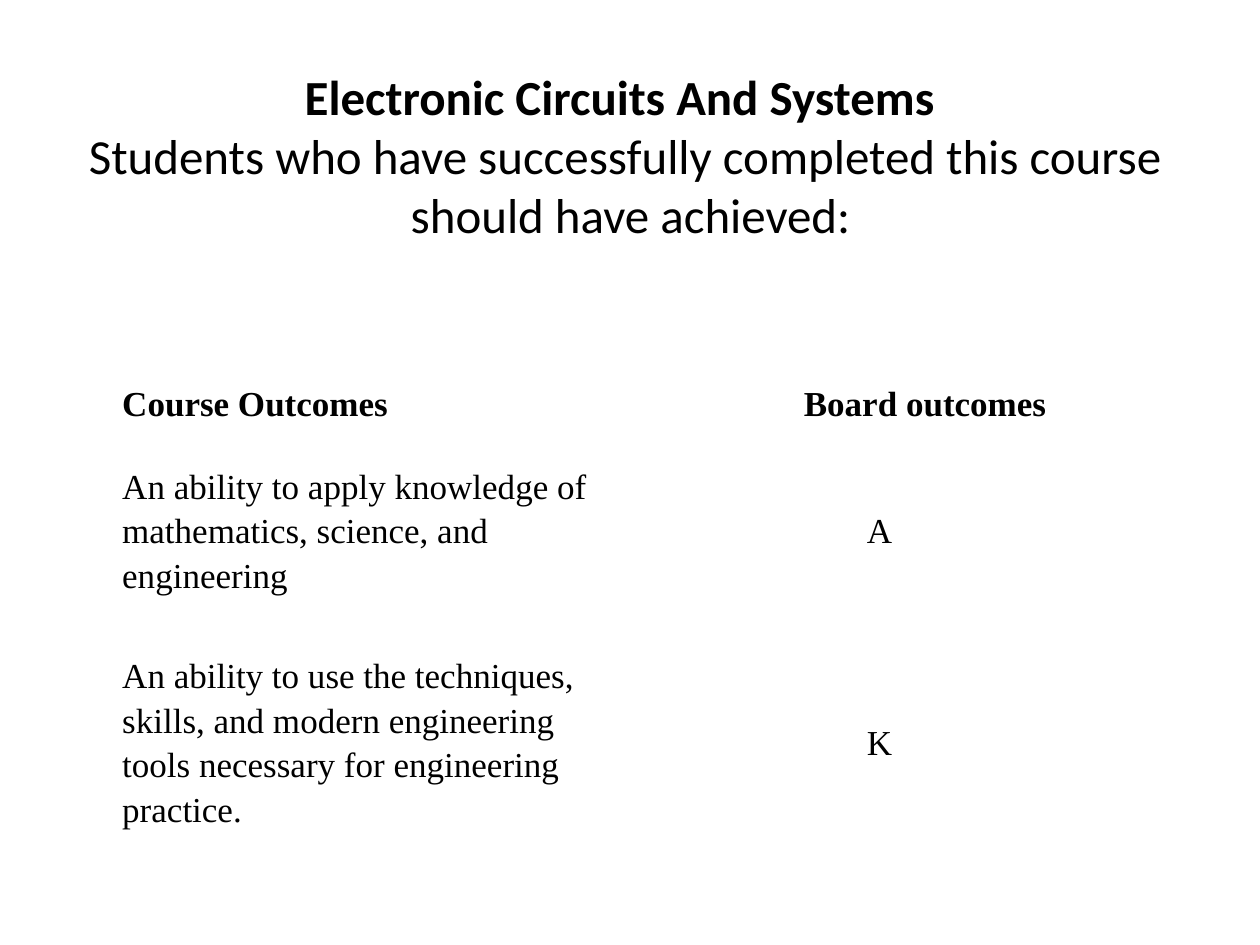
import pptx
import pptx.dml.color
import pptx.enum.text
import pptx.util
from pptx.util import Inches

ALIGN = pptx.enum.text.PP_ALIGN
MIDDLE = pptx.enum.text.MSO_ANCHOR.MIDDLE


def color(hex_code):
    return pptx.dml.color.RGBColor.from_string(hex_code)


class SlideBuilder:
    heading_font, heading_size = "Calibri", 28
    table_font, table_size = "Times New Roman", 20
    ink = "000000"
    cell_inset = 0.05
    line_spacing = 1.15

    def __init__(self, slide):
        self.slide = slide

    def style(self, paragraph, font, size, bold, align):
        paragraph.alignment = align
        for run in paragraph.runs:
            run.font.name = font
            run.font.size = pptx.util.Pt(size)
            run.font.bold = bold
            run.font.color.rgb = color(self.ink)

    def heading(self, lines, left, top, width, height, top_inset):
        """Centred lines, the first of them bold."""
        box = self.slide.shapes.add_textbox(
            Inches(left), Inches(top), Inches(width), Inches(height))
        frame = box.text_frame
        frame.word_wrap = True
        frame.vertical_anchor = MIDDLE
        frame.margin_top = Inches(top_inset)
        frame.text = "\n".join(lines)
        for index, paragraph in enumerate(frame.paragraphs):
            self.style(paragraph, self.heading_font, self.heading_size,
                       index == 0, ALIGN.CENTER)

    def cell(self, cell, text, bold, align, left_inset):
        cell.fill.background()
        cell.vertical_anchor = MIDDLE
        cell.margin_left = Inches(left_inset)
        cell.margin_right = cell.margin_top = cell.margin_bottom = Inches(self.cell_inset)
        cell.text_frame.text = text
        paragraph = cell.text_frame.paragraphs[0]
        paragraph.line_spacing = self.line_spacing
        self.style(paragraph, self.table_font, self.table_size, bold, align)

    def outcomes_table(self, rows, left, top, column_width, row_heights, header_indent):
        """Two columns; the second header is indented, the codes below it centred."""
        table = self.slide.shapes.add_table(
            len(rows), 2, Inches(left), Inches(top),
            Inches(2 * column_width), Inches(sum(row_heights))).table
        table.horz_banding = False
        for column in table.columns:
            column.width = Inches(column_width)
        for r, (texts, height) in enumerate(zip(rows, row_heights)):
            table.rows[r].height = Inches(height)
            is_header = r == 0
            for c, text in enumerate(texts):
                centred = c == 1 and not is_header
                indented = c == 1 and is_header
                self.cell(table.cell(r, c), text, is_header,
                          ALIGN.CENTER if centred else ALIGN.LEFT,
                          header_indent if indented else self.cell_inset)


def main():
    deck = pptx.Presentation()
    deck.slide_width, deck.slide_height = Inches(10), Inches(7.5)
    builder = SlideBuilder(deck.slides.add_slide(deck.slide_layouts[6]))

    outcomes = [
        ("Course Outcomes", "Board outcomes"),
        ("An ability to apply knowledge of mathematics, science, and engineering", "A"),
        ("An ability to use the techniques, skills, and modern engineering tools "
         "necessary for engineering practice.", "K"),
    ]
    builder.outcomes_table(outcomes, 0.92, 2.9, 4.04, [0.57, 1.46, 1.9], 1.42)
    builder.heading(
        ["Electronic Circuits And Systems ",
         "Students who have successfully completed this course",
         " should have achieved:"],
        0.25, 0, 9.42, 1.99, 0.52)
    deck.save("out.pptx")


if __name__ == "__main__":
    main()
